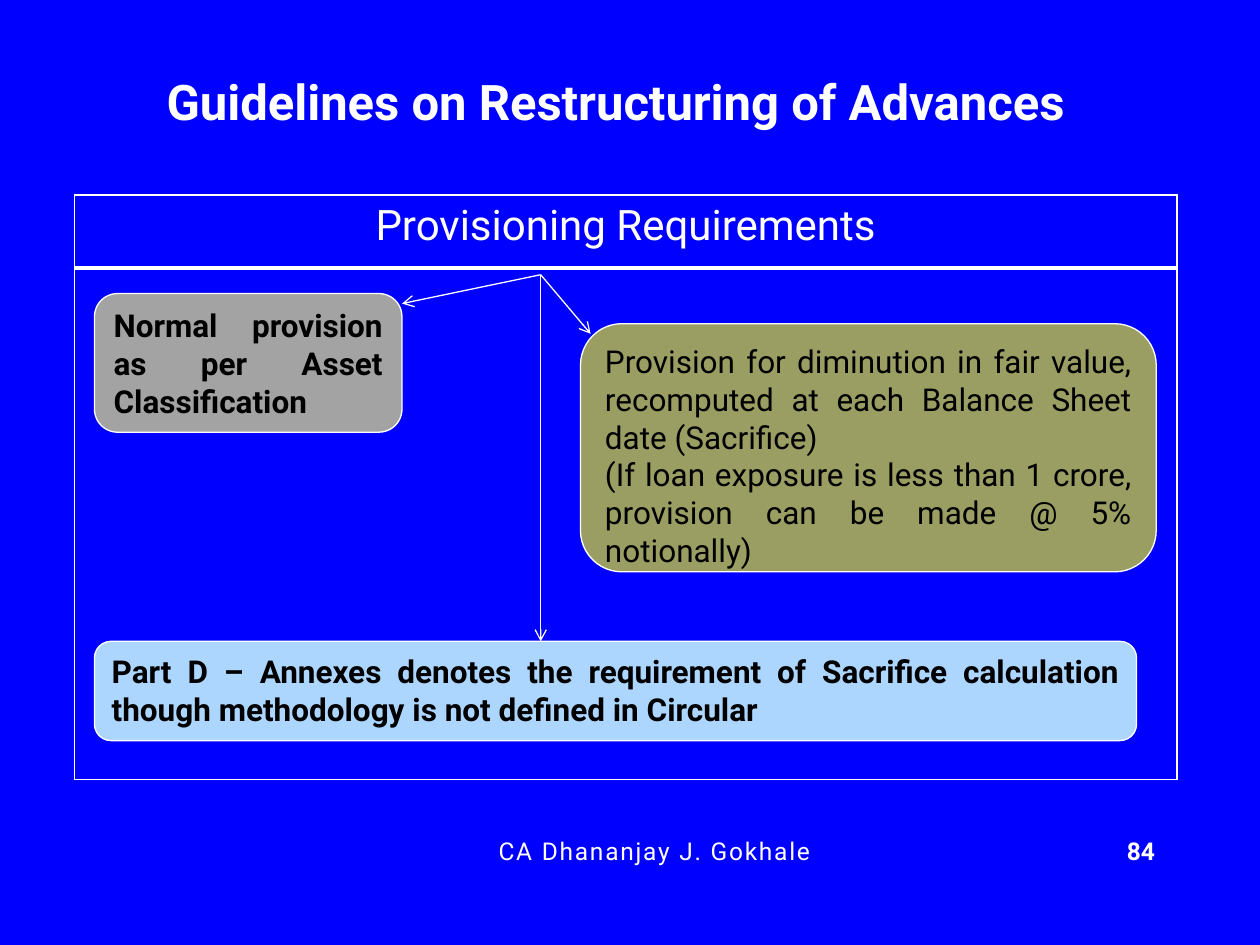
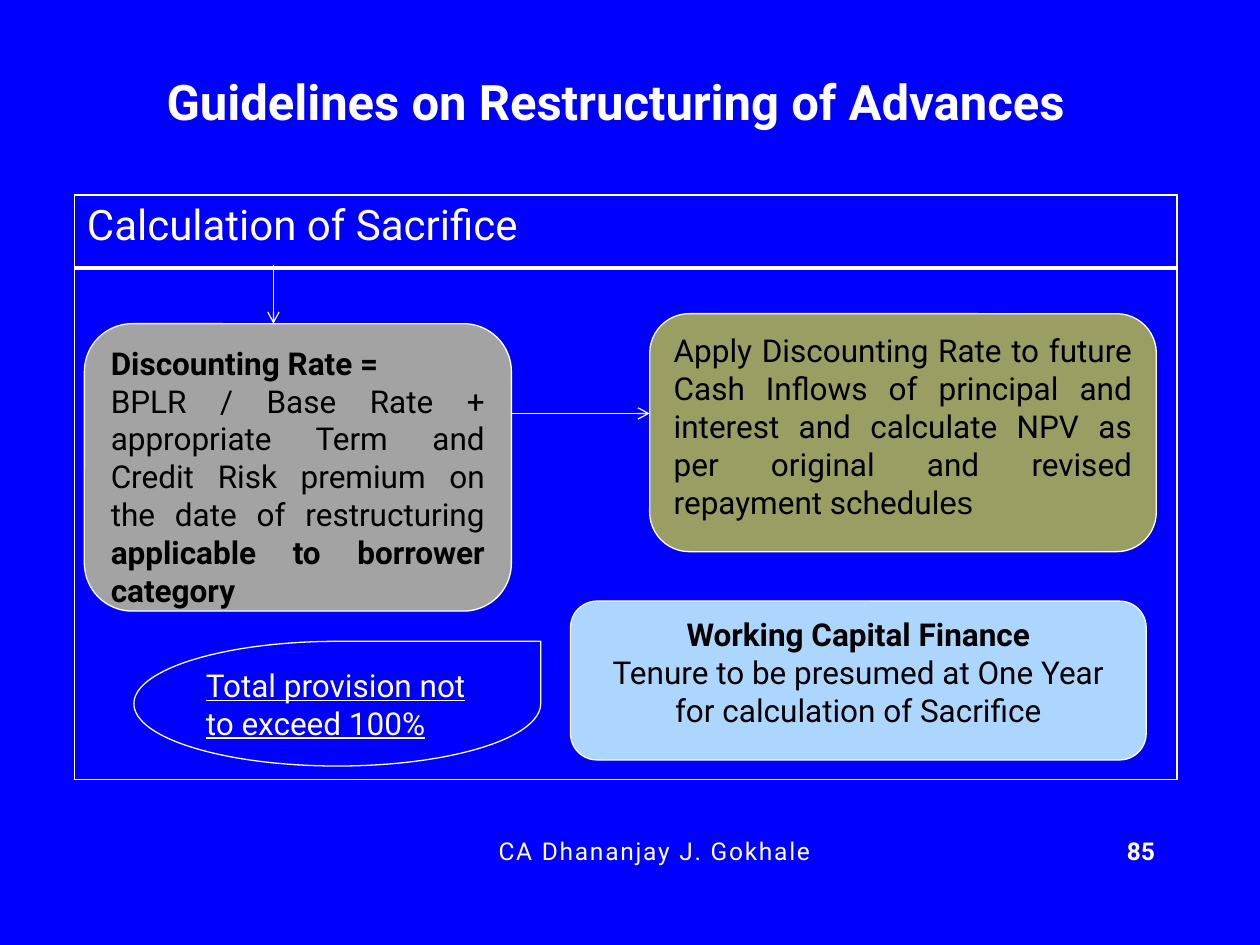
"""Build two slides on provisioning and sacrifice for restructured advances."""
from lxml import etree
from pptx import Presentation
from pptx.dml.color import RGBColor
from pptx.enum.shapes import MSO_CONNECTOR as Connector, MSO_SHAPE as Shape
from pptx.enum.text import MSO_ANCHOR as Anchor, PP_ALIGN as Align
from pptx.oxml.ns import qn
from pptx.util import Pt

BLUE, WHITE, BLACK = "0000FF", "FFFFFF", "000000"
GRAY, OLIVE, SKY = "A3A3A3", "9A9E62", "ADD6FF"
FONT = "Roboto"
TITLE = "Guidelines on Restructuring of Advances"
FOOTER = "CA Dhananjay J. Gokhale"
TITLE_AREA = (36.75, 21, 630, 73.5)
FOOTER_AREA = (121.5, 474, 505, 28)
NUMBER_AREA = (632.25, 474, 39.5, 36)
PANEL_AREA = (42.5, 111.5, 630, 334)
HEADING_HEIGHT = 41.75

BOLD, PLAIN, UNDERLINED = {"bold": True}, {}, {"underline": True}

SLIDES = [
    {
        "number": "84",
        "heading": ("Provisioning Requirements", Align.CENTER),
        "boxes": [
            (Shape.ROUNDED_RECTANGLE, (54, 366.5, 595.5, 56.75), SKY, Align.JUSTIFY, [
                (BOLD, ["Part D – Annexes denotes the requirement of Sacrifice calculation "
                        "though methodology is not defined in Circular"])]),
            (Shape.ROUNDED_RECTANGLE, (331.75, 185, 329, 141.75), OLIVE, Align.JUSTIFY, [
                (PLAIN, ["Provision for diminution in fair value, recomputed at each "
                         "Balance Sheet date (Sacrifice)"]),
                (PLAIN, ["(If loan exposure is less than 1 crore, provision can be made "
                         "@ 5% notionally)"])]),
            (Shape.ROUNDED_RECTANGLE, (54, 167.75, 175.75, 79.25), GRAY, Align.JUSTIFY, [
                (BOLD, ["Normal provision as per Asset Classification"])]),
        ],
        "arrows": [
            ((309, 157), (337.5, 190.75)),
            ((309, 157), (229.75, 173.5)),
            ((309, 157), (309, 366.5)),
        ],
    },
    {
        "number": "85",
        "heading": ("Calculation of Sacrifice", Align.LEFT),
        "boxes": [
            (Shape.ROUNDED_RECTANGLE, (326, 343.5, 329, 90.75), SKY, Align.CENTER, [
                (BOLD, ["Working Capital Finance"]),
                (PLAIN, ["Tenure to be presumed at One Year for calculation of Sacrifice"])]),
            (Shape.ROUNDED_RECTANGLE, (371.25, 179.25, 289.5, 136), OLIVE, Align.JUSTIFY, [
                (PLAIN, ["Apply Discounting Rate to future Cash Inflows of principal and "
                         "interest and calculate NPV as per original and revised "
                         "repayment schedul", ("es", {"name": "Arial"})])]),
            (Shape.ROUNDED_RECTANGLE, (48.25, 185, 244, 164.25), GRAY, Align.JUSTIFY, [
                (BOLD, ["Discounting Rate ="]),
                (PLAIN, ["BPLR / Base Rate + appropriate Term and Credit Risk premium on "
                         "the date of restructuring ",
                         ("applicable to borrower category", BOLD)])]),
            (Shape.TEAR, (76.5, 366.5, 232.5, 71.25), None, Align.LEFT, [
                (UNDERLINED, ["Total provision not to exceed 100%"])]),
        ],
        "arrows": [
            ((156.25, 151.25), (156.25, 185)),
            ((292.25, 236.25), (371.25, 236.25)),
        ],
    },
]


def color(hex_code):
    return RGBColor.from_string(hex_code)


def points(values):
    return [Pt(value) for value in values]


def write(frame, paragraphs, size, ink, align):
    frame.word_wrap = True
    for index, (style, runs) in enumerate(paragraphs):
        paragraph = frame.add_paragraph() if index else frame.paragraphs[0]
        paragraph.alignment = align
        font = paragraph.font
        font.name, font.size = FONT, Pt(size)
        font.color.rgb = color(ink)
        for name, value in style.items():
            setattr(font, name, value)
        for item in runs:
            text, changes = (item, {}) if isinstance(item, str) else item
            run = paragraph.add_run()
            run.text = text
            for name, value in changes.items():
                setattr(run.font, name, value)


def add_label(slide, area, text, size, style=PLAIN, anchor=Anchor.TOP):
    frame = slide.shapes.add_textbox(*points(area)).text_frame
    frame.vertical_anchor = anchor
    write(frame, [(style, [text])], size, WHITE, Align.CENTER)
    return frame


def set_borders(cell, **widths):
    properties = cell._tc.get_or_add_tcPr()
    for index, side in enumerate("LRTB"):
        line = etree.Element(qn(f"a:ln{side}"), w=str(Pt(widths.get(side, 1))))
        fill = etree.SubElement(line, qn("a:solidFill"))
        etree.SubElement(fill, qn("a:srgbClr"), val=WHITE)
        properties.insert(index, line)


def add_panel(slide, heading, align):
    table = slide.shapes.add_table(2, 1, *points(PANEL_AREA)).table
    table.first_row = table.horz_banding = False
    table.rows[0].height = Pt(HEADING_HEIGHT)
    table.rows[1].height = Pt(PANEL_AREA[3] - HEADING_HEIGHT)
    top, body = table.cell(0, 0), table.cell(1, 0)
    for cell in (top, body):
        cell.fill.background()
    set_borders(top, B=3)
    set_borders(body, T=3)
    write(top.text_frame, [(PLAIN, [heading])], 24, WHITE, align)


def add_box(slide, kind, area, fill, align, paragraphs):
    shape = slide.shapes.add_shape(kind, *points(area))
    shape.shadow.inherit = False
    if fill:
        shape.fill.solid()
        shape.fill.fore_color.rgb = color(fill)
    else:
        shape.fill.background()
    shape.line.color.rgb = color(WHITE)
    shape.line.width = Pt(0.75)
    shape.text_frame.vertical_anchor = Anchor.TOP
    write(shape.text_frame, paragraphs, 18, BLACK if fill else WHITE, align)


def add_arrow(slide, start, end):
    arrow = slide.shapes.add_connector(Connector.STRAIGHT, *points(start + end))
    arrow.line.color.rgb = color(WHITE)
    arrow.line.width = Pt(0.75)
    etree.SubElement(arrow.line._get_or_add_ln(), qn("a:tailEnd"), type="arrow")
    etree.SubElement(arrow._element.spPr, qn("a:effectLst"))


def add_slide(presentation, content):
    slide = presentation.slides.add_slide(presentation.slide_layouts[6])
    slide.background.fill.solid()
    slide.background.fill.fore_color.rgb = color(BLUE)
    add_label(slide, TITLE_AREA, TITLE, 28, BOLD, Anchor.MIDDLE)
    add_panel(slide, *content["heading"])
    footer = add_label(slide, FOOTER_AREA, FOOTER, 14)
    footer.paragraphs[0].runs[0].font._element.set("spc", "100")
    add_label(slide, NUMBER_AREA, content["number"], 14, BOLD)
    for box in content["boxes"]:
        add_box(slide, *box)
    for arrow in content["arrows"]:
        add_arrow(slide, *arrow)


def main():
    presentation = Presentation()
    presentation.slide_width, presentation.slide_height = Pt(720), Pt(540)
    for content in SLIDES:
        add_slide(presentation, content)
    presentation.save("out.pptx")


if __name__ == "__main__":
    main()
